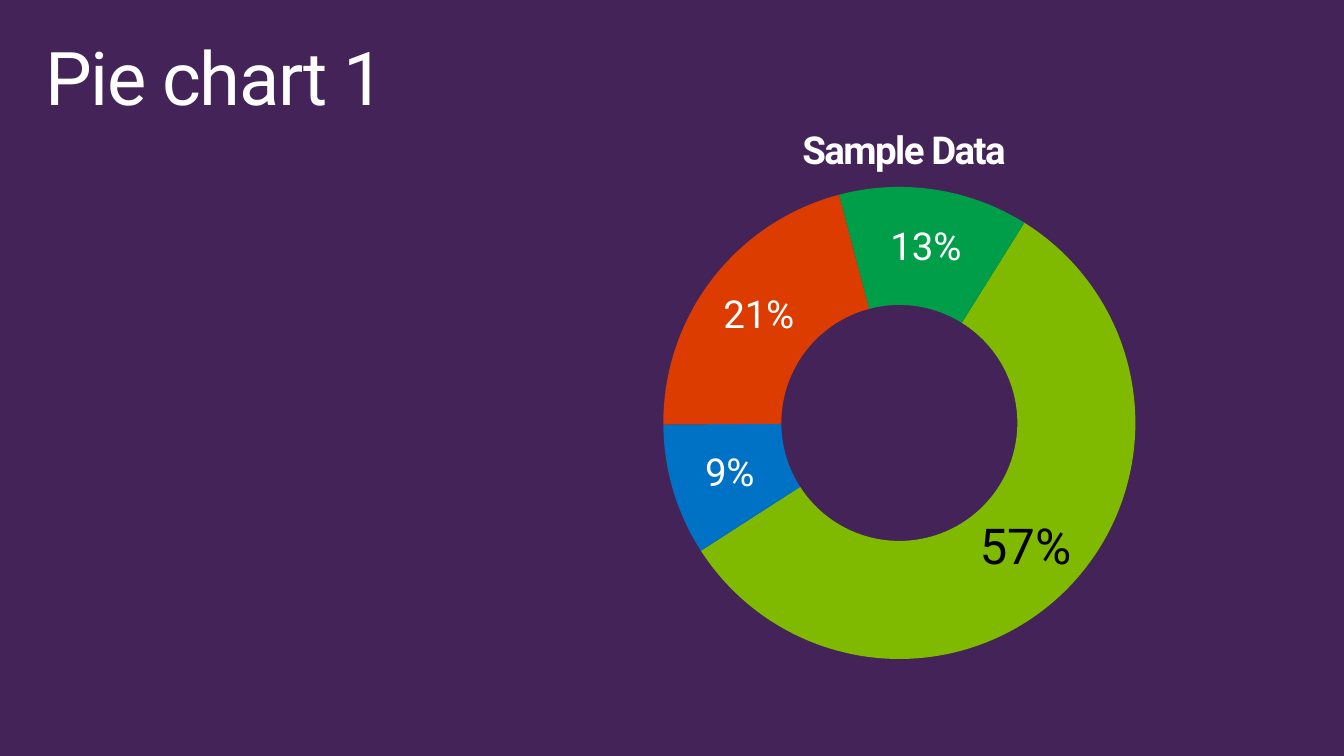
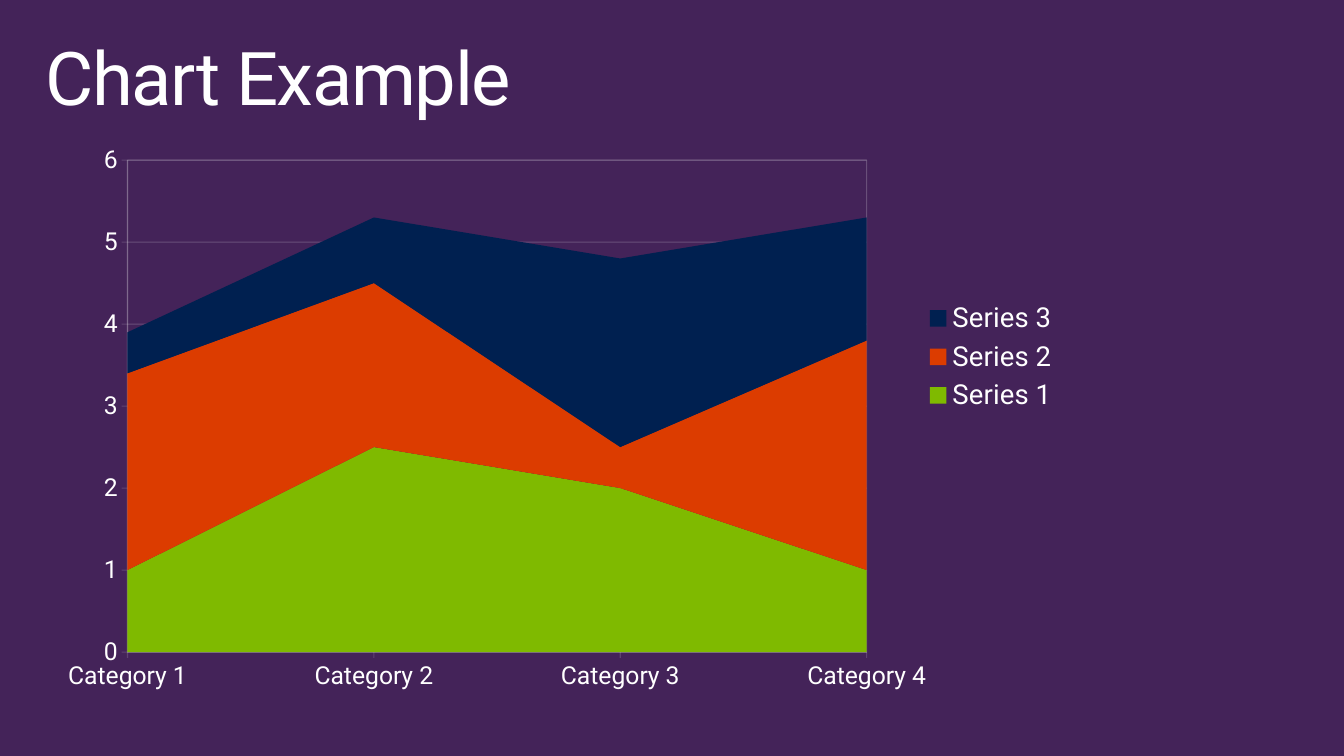
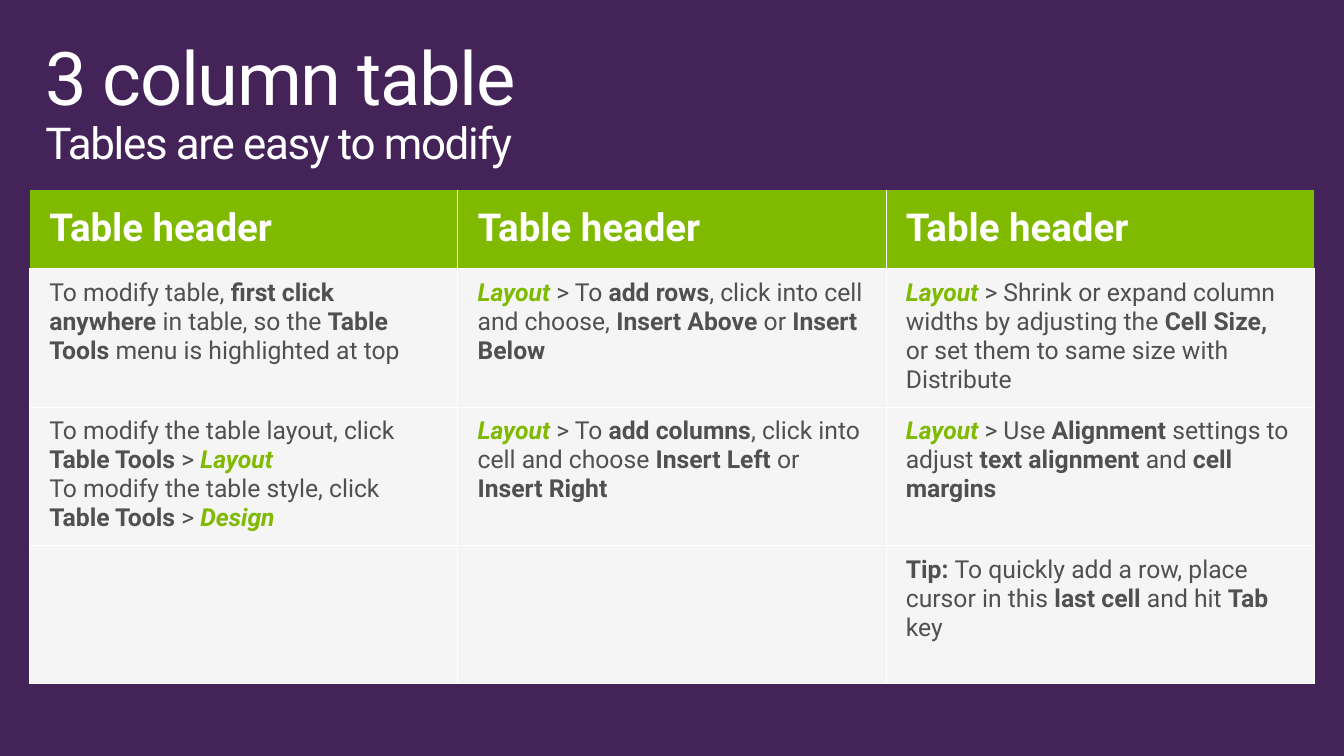
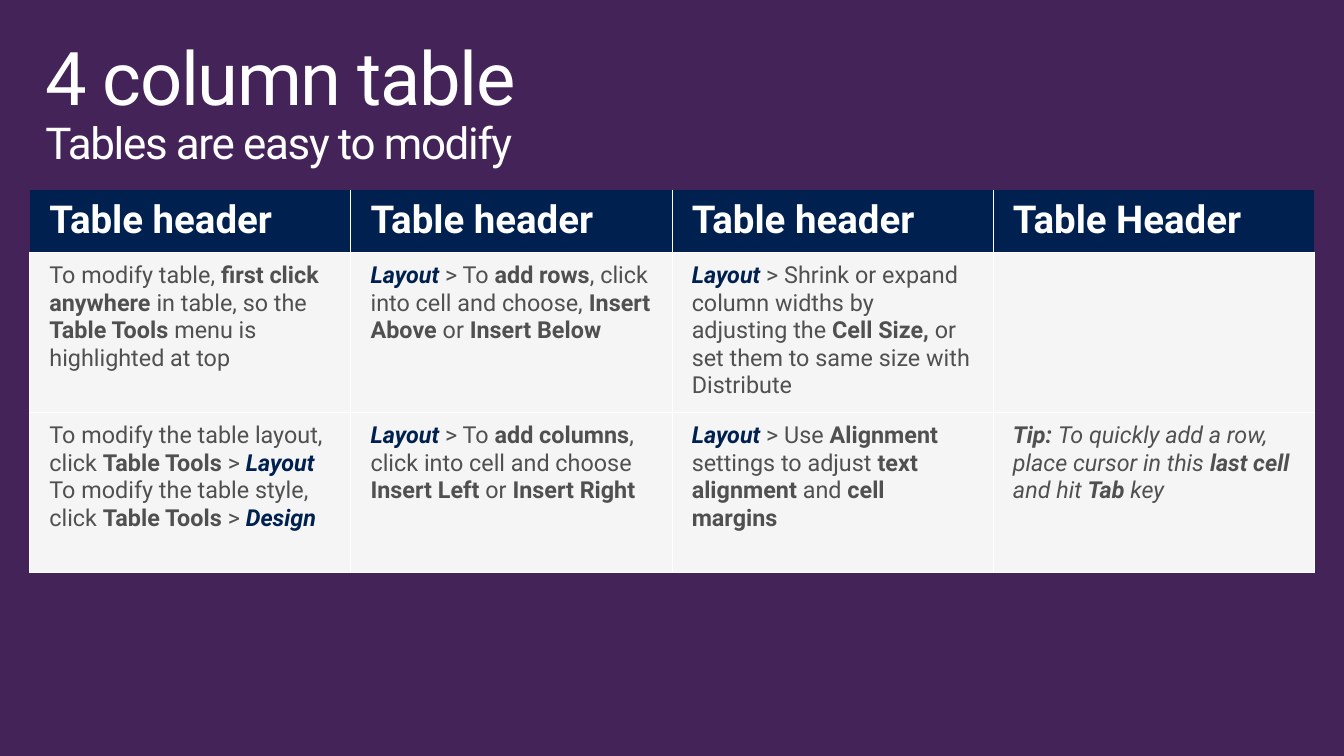
from lxml.etree import SubElement
from pptx import Presentation
from pptx.chart.data import CategoryChartData
from pptx.dml.color import RGBColor
from pptx.enum.chart import XL_CHART_TYPE, XL_LEGEND_POSITION, XL_TICK_MARK
from pptx.enum.text import MSO_ANCHOR
from pptx.oxml import parse_xml
from pptx.oxml.ns import nsdecls, qn
from pptx.util import Inches, Pt

PURPLE, WHITE, BLACK, GREY, PALE = "442359", "FFFFFF", "000000", "505050", "F5F5F5"
LIME, BLUE, ORANGE, GREEN, NAVY = "7FBA00", "0072C6", "DC3C00", "009E49", "002050"

BODY = [
    [
        "To modify table, *first click anywhere *in table, so the *Table Tools *menu is highlighted at top",
        "*~Layout *> To *add rows*, click into cell and choose, *Insert Above *or *Insert Below*",
        "*~Layout *> Shrink or expand column widths by adjusting the *Cell Size, *"
        "or set them to same size with Distribute",
    ],
    [
        "To modify the table layout, click *Table Tools *> *~Layout*\n"
        "To modify the table style, click *Table Tools *> *~Design*",
        "*~Layout *> To *add columns*, click into cell and choose *Insert Left *or *Insert Right*",
        "*~Layout *> Use *Alignment *settings to adjust *text alignment* and *cell margins*",
    ],
]
TIP = "*Tip: *To quickly add a row, place cursor in this *last cell *and hit *Tab* key"


def rgb(code):
    return RGBColor.from_string(code)


class Deck:
    """Holds the shared style and the current slide, and draws each kind of element."""

    def __init__(self):
        self.file = Presentation()
        self.file.slide_width, self.file.slide_height = Inches(13.6), Inches(7.65)

    def font(self, font, size, color=WHITE, **more):
        for name, value in {"name": "Roboto", "size": Pt(size), **more}.items():
            setattr(font, name, value)
        font.color.rgb = rgb(color)

    def inset(self, target, side, top):
        for name, value in {"left": side, "right": side, "top": top, "bottom": top}.items():
            setattr(target, "margin_" + name, Inches(value))

    def tight(self, para, text, size):
        run = para.add_run()
        run.text = text
        self.font(run.font, size)
        run._r.get_or_add_rPr().set("spc", "-100")

    def slide(self, title, under=""):
        self.page = self.file.slides.add_slide(self.file.slide_layouts[6])
        fill = self.page.background.fill
        fill.solid()
        fill.fore_color.rgb = rgb(PURPLE)
        box = self.page.shapes.add_textbox(Inches(0.3), Inches(0.32), Inches(13), Inches(1))
        frame = box.text_frame
        frame.word_wrap = True
        self.inset(frame, 0.16, 0.1)
        para = frame.paragraphs[0]
        para.line_spacing = 0.9
        self.tight(para, title, 54)
        if under:
            para.add_line_break()
            self.tight(para, under, 32)

    def chart(self, kind, spot, cats, series, size):
        data = CategoryChartData()
        data.categories = cats
        for name, values in series.items():
            data.add_series(name, values)
        chart = self.page.shapes.add_chart(kind, *map(Inches, spot), data).chart
        self.font(chart.font, size)
        return chart

    def place(self, chart, part, index, inner=False, **spot):
        parent = chart.element.xpath(f"c:chart/c:{part}")[0]
        for old in parent.findall(qn("c:layout")):
            parent.remove(old)
        layout = parse_xml(f"<c:layout {nsdecls('c')}><c:manualLayout/></c:layout>")
        rules = {"layoutTarget": "inner"} if inner else {}
        rules.update(xMode="edge", yMode="edge", **spot)
        for name, value in rules.items():
            SubElement(layout[0], qn("c:" + name)).set("val", str(value))
        parent.insert(index, layout)

    def ring(self, spot, title, cats, values, colors):
        chart = self.chart(XL_CHART_TYPE.DOUGHNUT, spot, cats, {"Series 1": values}, 10)
        chart.has_legend = False
        chart.has_title = True
        self.tight(chart.chart_title.text_frame.paragraphs[0], title, 28)
        self.place(chart, "title", 1, x=0.41, y=0.03)
        self.place(chart, "plotArea", 0, True, x=0.27, y=0.14, w=0.5, h=0.75)
        for name, value in {"firstSliceAng": 32, "holeSize": 51}.items():
            chart.element.xpath(f".//c:{name}")[0].set("val", str(value))
        row = chart.plots[0].series[0]
        for index, color in enumerate(colors):
            fill = row.points[index].format.fill
            fill.solid()
            fill.fore_color.rgb = rgb(color)
        labels = row.data_labels
        look = {
            "show_value": False,
            "show_percentage": True,
            "number_format": "0%",
            "number_format_is_linked": False,
        }
        for name, value in look.items():
            setattr(labels, name, value)
        self.font(labels.font, 28)
        self.font(row.points[0].data_label.font, 36, BLACK)
        for name, value in {"showVal": 0, "showPercent": 1}.items():
            chart.element.xpath(f".//c:dLbl/c:{name}")[0].set("val", str(value))

    def faint(self, line, alpha):
        line.width = Pt(0.75)
        line.color.rgb = rgb(WHITE)
        tint = line.fill._xPr.find(".//" + qn("a:srgbClr"))
        SubElement(tint, qn("a:alpha")).set("val", str(alpha * 1000))

    def area(self, spot, cats, series, colors):
        chart = self.chart(XL_CHART_TYPE.AREA_STACKED, spot, cats, series, 18)
        chart.has_title = False
        self.place(chart, "plotArea", 0, True, x=0.09, y=0.05, w=0.68, h=0.83)
        for row, color in zip(chart.plots[0].series, colors):
            row.format.fill.solid()
            row.format.fill.fore_color.rgb = rgb(color)
        for axis in (chart.category_axis, chart.value_axis):
            axis.major_tick_mark = XL_TICK_MARK.OUTSIDE
            axis.minor_tick_mark = XL_TICK_MARK.NONE
            self.faint(axis.format.line, 15)
        for name, value in {"major_unit": 1, "minimum_scale": 0, "maximum_scale": 6}.items():
            setattr(chart.value_axis, name, value)
        chart.value_axis.has_major_gridlines = True
        self.faint(chart.value_axis.major_gridlines.format.line, 20)
        wall = parse_xml(
            f'<c:spPr {nsdecls("c", "a")}><a:noFill/><a:ln w="9525"><a:solidFill><a:srgbClr val="{WHITE}">'
            '<a:alpha val="20000"/></a:srgbClr></a:solidFill></a:ln></c:spPr>'
        )
        chart.element.xpath("c:chart/c:plotArea")[0].append(wall)
        chart.has_legend = True
        chart.legend.position = XL_LEGEND_POSITION.RIGHT
        chart.legend.include_in_layout = False
        self.font(chart.legend.font, 20)
        self.place(chart, "legend", 1, x=0.82, y=0.28)

    def prose(self, para, text, size, accent):
        slant = text.startswith("/")
        for count, line in enumerate(text.lstrip("/").split("\n")):
            if count:
                para.add_line_break()
            for index, part in enumerate(line.split("*")):
                if part:
                    key = part.startswith("~")
                    run = para.add_run()
                    run.text = part.lstrip("~")
                    color = accent if key else GREY
                    self.font(run.font, size, color, bold=index % 2 == 1, italic=key or slant)

    def cell(self, cell, color, sides):
        self.inset(cell, 0.2, 0.1)
        cell.fill.solid()
        cell.fill.fore_color.rgb = rgb(color)
        for index, side in enumerate(sides):
            edge = parse_xml(
                f'<a:ln{side} {nsdecls("a")} w="9525"><a:solidFill>'
                f'<a:srgbClr val="{WHITE}"/></a:solidFill></a:ln{side}>'
            )
            cell._tc.get_or_add_tcPr().insert(index, edge)

    def table(self, heads, rows, tall, accent, size):
        wide = len(heads)
        spot = map(Inches, (0.3, 1.92, 13, sum(tall)))
        grid = self.page.shapes.add_table(len(tall), wide, *spot).table
        grid.first_row = grid.horz_banding = False
        style = grid._tbl.tblPr.find(qn("a:tableStyleId"))
        style.text = "{2D5ABB26-0587-4C30-8999-92F81FD0307C}"
        for col in grid.columns:
            col.width = Inches(13 / wide)
        for row, high in zip(grid.rows, tall):
            row.height = Inches(high)
        for index, text in enumerate(heads):
            cell = grid.cell(0, index)
            sides = "L" * (index > 0) + "R" * (index < wide - 1) + "B"
            self.cell(cell, accent, sides)
            cell.vertical_anchor = MSO_ANCHOR.MIDDLE
            para = cell.text_frame.paragraphs[0]
            para.line_spacing = 0.9
            run = para.add_run()
            run.text = text
            self.font(run.font, 28, bold=True)
        for down, row in enumerate(rows, 1):
            for across, text in enumerate(row):
                cell = grid.cell(down, across)
                self.cell(cell, PALE, "LRTB")
                self.prose(cell.text_frame.paragraphs[0], text, size, accent)


def main():
    deck = Deck()
    deck.slide("Pie chart 1")
    deck.ring(
        (4.13, 1, 9.56, 6.37), "Sample Data", ["1", "2", "3", "4"],
        [57, 9, 21, 13], [LIME, BLUE, ORANGE, GREEN],
    )

    deck.slide("Chart Example")
    series = {
        "Series 1": [1, 2.5, 2, 1],
        "Series 2": [2.4, 2, 0.5, 2.8],
        "Series 3": [0.5, 0.8, 2.3, 1.5],
    }
    cats = [f"Category {n}" for n in range(1, 5)]
    deck.area((0.3, 1.32, 11, 6), cats, series, [LIME, ORANGE, NAVY])

    under = "Tables are easy to modify"
    heads = ["Table header"] * 3
    deck.slide("3 column table", under)
    deck.table(heads, BODY + [["", "", TIP]], [0.8] + [1.4] * 3, LIME, 18)

    deck.slide("4 column table", under)
    rows = [row + [last] for row, last in zip(BODY, ["", "/" + TIP])]
    deck.table(heads + ["Table Header"], rows, [0.63] + [1.62] * 2, NAVY, 17)
    deck.file.save("out.pptx")


if __name__ == "__main__":
    main()
